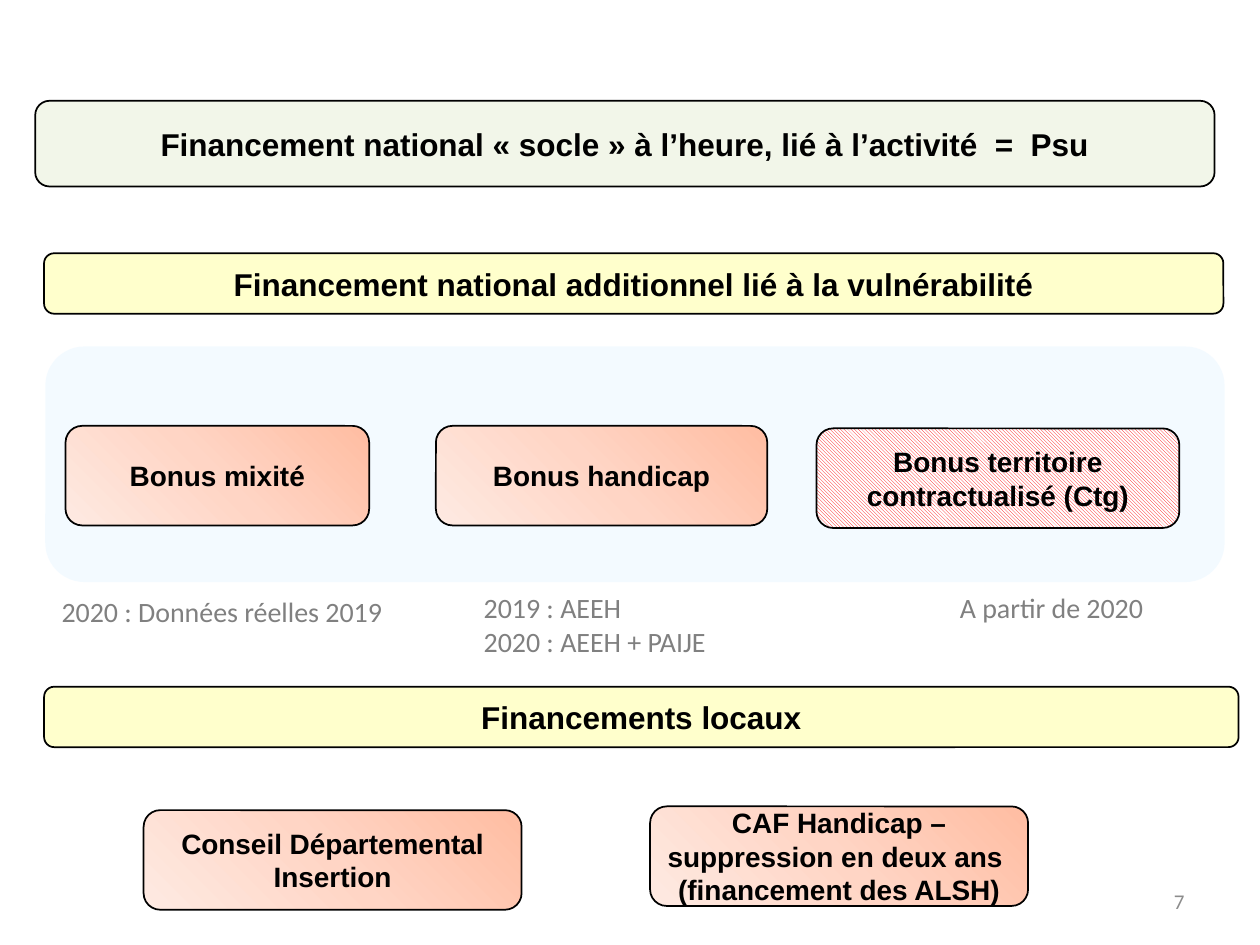
from lxml import etree
from pptx import Presentation
from pptx.dml.color import RGBColor
from pptx.enum.dml import MSO_PATTERN
from pptx.enum.shapes import MSO_SHAPE
from pptx.enum.text import MSO_ANCHOR, PP_ALIGN
from pptx.oxml import parse_xml
from pptx.oxml.ns import nsdecls, qn
from pptx.util import Inches, Pt

ROUNDED = MSO_SHAPE.ROUNDED_RECTANGLE
HATCH = MSO_PATTERN.LIGHT_DOWNWARD_DIAGONAL
LEFT, CENTER, RIGHT = PP_ALIGN.LEFT, PP_ALIGN.CENTER, PP_ALIGN.RIGHT
TOP, MIDDLE = MSO_ANCHOR.TOP, MSO_ANCHOR.MIDDLE

COLUMNS, ROWS = 100, 75
COLORS = {
    "ink": "000000", "note": "808080", "number": "8C8C8C", "paper": "FFFFFF",
    "base": "EBF1DE", "panel": "CCECFF", "band": "FFFFCC", "hatch": "FF0000",
}
BONUS_STOPS = {0: "FFBDA2", 50: "FFD5C5", 100: "FEEAE2"}
BAND_TEXT = {"name": "Arial", "size": Pt(18), "bold": True}
BONUS_TEXT = {"name": "Arial", "size": Pt(16), "bold": True}
NOTE_TEXT = {"name": "Calibri", "size": Pt(16)}
NUMBER_TEXT = {"name": "Calibri", "size": Pt(12)}


def color(name):
    return RGBColor.from_string(COLORS[name])


class FundingPage:
    """Draws on one slide; places are (column, row, columns wide, rows high)."""

    def __init__(self, deck):
        self.page = deck.slides.add_slide(deck.slide_layouts[6])
        self.column = deck.slide_width / COLUMNS
        self.row = deck.slide_height / ROWS

    def place(self, left, top, width, height):
        return (round(left * self.column), round(top * self.row),
                round(width * self.column), round(height * self.row))

    def set_text(self, box, lines, text_format, ink, align, anchor):
        frame = box.text_frame
        frame.word_wrap = True
        frame.vertical_anchor = anchor
        for index, line in enumerate(lines):
            para = frame.paragraphs[0] if index == 0 else frame.add_paragraph()
            para.alignment = align
            span = para.add_run()
            span.text = line
            span.font.color.rgb = color(ink)
            for name, value in text_format.items():
                setattr(span.font, name, value)

    def rounded(self, place, text=None, text_format=BAND_TEXT):
        """Adds an outlined box with centred text, or a bare panel without text."""
        box = self.page.shapes.add_shape(ROUNDED, *self.place(*place))
        box.shadow.inherit = False
        if text is None:
            box.line.fill.background()
        else:
            box.line.color.rgb = color("ink")
            box.line.width = Pt(1)
            self.set_text(box, [text], text_format, "ink", CENTER, MIDDLE)
        return box

    def band(self, place, fill, text=None, opacity=100):
        box = self.rounded(place, text)
        box.fill.solid()
        box.fill.fore_color.rgb = color(fill)
        if opacity < 100:
            solid = box._element.spPr.find(qn("a:solidFill"))
            etree.SubElement(solid[0], qn("a:alpha")).set("val", str(opacity * 1000))

    def bonus(self, place, text):
        """Adds a box shaded outwards from its top right corner."""
        box = self.rounded(place, text, BONUS_TEXT)
        stops = "".join(
            f'<a:gs pos="{share * 1000}"><a:srgbClr val="{shade}"/></a:gs>'
            for share, shade in BONUS_STOPS.items())
        shading = parse_xml(
            f'<a:gradFill {nsdecls("a")} rotWithShape="1"><a:gsLst>{stops}</a:gsLst>'
            '<a:path path="circle"><a:fillToRect l="100000" b="100000"/></a:path>'
            '</a:gradFill>')
        box._element.spPr.find(qn("a:prstGeom")).addnext(shading)

    def hatched_bonus(self, place, text):
        box = self.rounded(place, text, BONUS_TEXT)
        box.fill.patterned()
        box.fill.pattern = HATCH
        box.fill.fore_color.rgb = color("hatch")
        box.fill.back_color.rgb = color("paper")

    def note(self, place, *lines, text_format=NOTE_TEXT, ink="note",
             align=LEFT, anchor=TOP):
        box = self.page.shapes.add_textbox(*self.place(*place))
        self.set_text(box, lines, text_format, ink, align, anchor)


def main():
    deck = Presentation()
    deck.slide_width, deck.slide_height = Inches(10), Inches(7.5)
    page = FundingPage(deck)

    page.note((71.7, 69.5, 23.3, 4), "7", text_format=NUMBER_TEXT,
              ink="number", align=RIGHT, anchor=MIDDLE)

    page.band((2.8, 8, 93.6, 6.8), "base",
              "Financement national « socle » à l’heure, lié à l’activité  =  Psu",
              opacity=64)
    page.band((3.6, 27.5, 93.6, 18.7), "panel", opacity=22)
    page.band((3.5, 20.1, 93.6, 4.8), "band",
              "Financement national additionnel lié à la vulnérabilité")
    page.band((3.5, 54.5, 94.8, 4.8), "band", "Financements locaux")

    page.hatched_bonus((64.8, 34, 28.8, 7.9), "Bonus territoire contractualisé (Ctg)")
    for left, top, width, text in (
        (34.6, 33.8, 26.3, "Bonus handicap"),
        (5.2, 33.8, 24.1, "Bonus mixité"),
        (51.6, 64, 30, "CAF Handicap – suppression en deux ans  (financement des ALSH)"),
        (11.4, 64.3, 30, "Conseil Départemental Insertion"),
    ):
        page.bonus((left, top, width, 7.9), text)

    page.note((37.4, 46.4, 22.8, 6.4), "2019 : AEEH", "2020 : AEEH + PAIJE")
    page.note((3.9, 46.7, 32.2, 3.7), "2020 : Données réelles 2019")
    page.note((75.2, 46.4, 16.7, 3.7), "A partir de 2020")

    deck.save("out.pptx")


if __name__ == "__main__":
    main()
